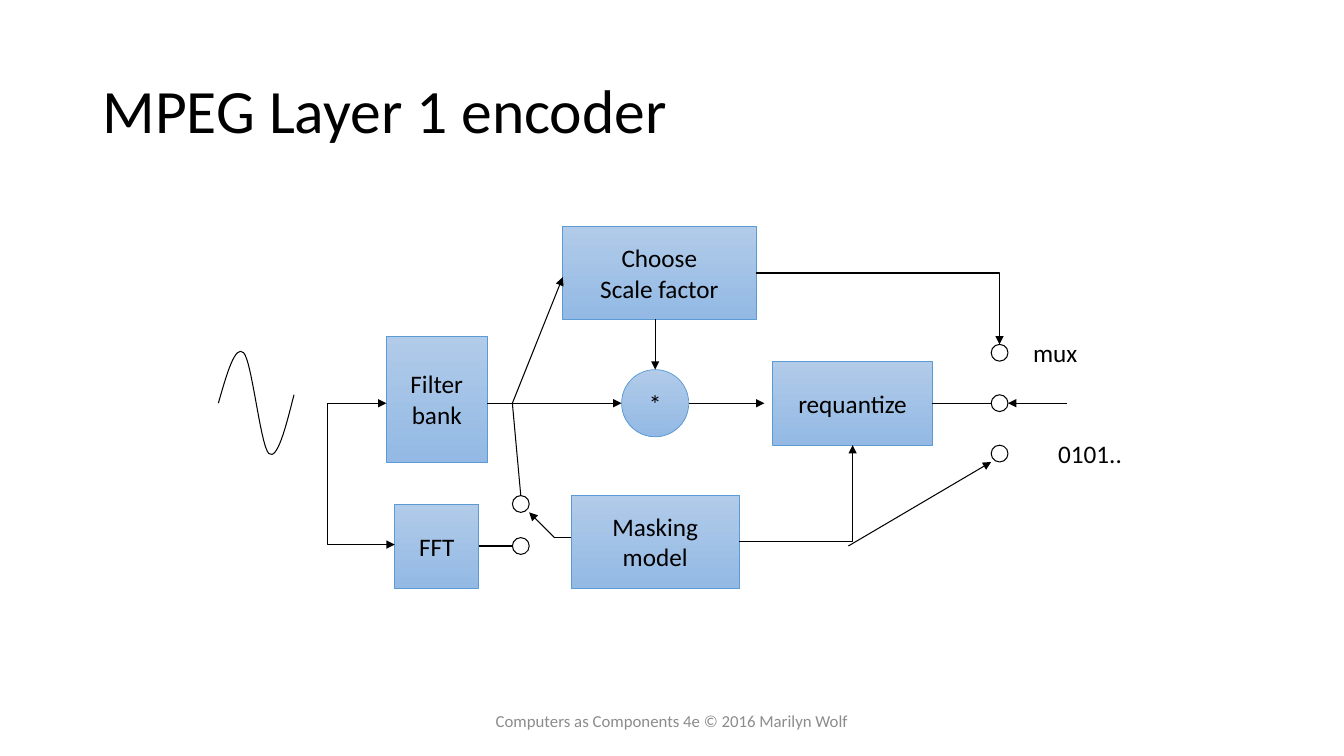
from dataclasses import dataclass

from lxml import etree
from pptx import Presentation
from pptx.dml.color import RGBColor
from pptx.enum.shapes import MSO_CONNECTOR, MSO_SHAPE
from pptx.enum.text import MSO_ANCHOR, MSO_AUTO_SIZE, PP_ALIGN
from pptx.oxml.ns import qn
from pptx.util import Pt

RECTANGLE, OVAL = MSO_SHAPE.RECTANGLE, MSO_SHAPE.OVAL
STRAIGHT, ELBOW = MSO_CONNECTOR.STRAIGHT, MSO_CONNECTOR.ELBOW
LEFT, CENTER = PP_ALIGN.LEFT, PP_ALIGN.CENTER
TOP, MIDDLE = MSO_ANCHOR.TOP, MSO_ANCHOR.MIDDLE


@dataclass(frozen=True)
class Theme:
    font: str = "Calibri"
    ink: RGBColor = RGBColor(0x00, 0x00, 0x00)
    muted: RGBColor = RGBColor(0x8C, 0x8C, 0x8C)
    outline: RGBColor = RGBColor(0x5B, 0x9B, 0xD5)
    block_top: RGBColor = RGBColor(0xB1, 0xCB, 0xE9)
    block_bottom: RGBColor = RGBColor(0x93, 0xB9, 0xE4)
    title_size: int = 44
    label_size: int = 18
    footer_size: int = 12
    wire: float = 0.75
    border: float = 0.5


THEME = Theme()


def write(frame, text, size=THEME.label_size, color=THEME.ink,
          align=LEFT, anchor=TOP, wrap=False, spacing=None):
    """Fill a text frame, one paragraph for each line of text."""
    frame.text = text
    frame.word_wrap = wrap
    frame.vertical_anchor = anchor
    for para in frame.paragraphs:
        para.alignment = align
        para.line_spacing = spacing
        para.font.name = THEME.font
        para.font.size = Pt(size)
        para.font.color.rgb = color


def connect(start, end, kind=STRAIGHT, arrow=True):
    wire = page.shapes.add_connector(kind, *map(Pt, start + end))
    wire.line.color.rgb = THEME.ink
    wire.line.width = Pt(THEME.wire)
    properties = wire._element.spPr
    if arrow:
        etree.SubElement(properties.find(qn("a:ln")), qn("a:tailEnd"), type="triangle")
    etree.SubElement(properties, qn("a:effectLst"))
    return properties.find(qn("a:prstGeom"))


deck = Presentation()
deck.slide_width, deck.slide_height = Pt(960), Pt(540)
page = deck.slides.add_slide(deck.slide_layouts[5])

title = page.shapes.title
title.left, title.top, title.width, title.height = map(Pt, (66, 28.8, 828, 104.4))
write(title.text_frame, "MPEG Layer 1 encoder", size=THEME.title_size,
      anchor=MIDDLE, wrap=True, spacing=0.9)

# Input wave: a start point, then three points for each Bezier curve
wave_points = [(156, 288),
               (162, 267), (168, 246), (174, 252),
               (180, 258), (186, 318), (192, 324),
               (198, 329), (204, 305.5), (210, 282)]
builder = page.shapes.build_freeform(*wave_points[0], scale=Pt(1))
builder.add_line_segments(wave_points[1:], close=False)
wave = builder.convert_to_shape()
wave.shadow.inherit = False
wave.fill.background()
wave.line.color.rgb = THEME.ink
wave.line.width = Pt(THEME.wire)
outline = next(wave._element.iter(qn("a:moveTo"))).getparent()
segments = outline.findall(qn("a:lnTo"))
for first in range(0, len(segments), 3):
    curve = etree.SubElement(outline, qn("a:cubicBezTo"))
    for segment in segments[first:first + 3]:
        curve.append(segment[0])
        outline.remove(segment)

# Processing blocks
blocks = [
    ("Filter\nbank", RECTANGLE, 276, 240, 72, 90),
    ("Choose\nScale factor", RECTANGLE, 402, 162, 138, 66),
    ("Masking\nmodel", RECTANGLE, 408, 354, 120, 66),
    ("requantize", RECTANGLE, 552, 258, 114, 60),
    ("*", OVAL, 444, 264, 48, 48),
    ("FFT", RECTANGLE, 282, 360, 60, 60),
]
for label, outline_kind, *bounds in blocks:
    block = page.shapes.add_shape(outline_kind, *map(Pt, bounds))
    block.shadow.inherit = False
    block.fill.gradient()
    block.fill.gradient_angle = 270
    for stop, color in zip(block.fill.gradient_stops,
                           (THEME.block_top, THEME.block_bottom)):
        stop.color.rgb = color
    block.line.color.rgb = THEME.outline
    block.line.width = Pt(THEME.border)
    write(block.text_frame, label, align=CENTER, anchor=MIDDLE)

# Switch contacts, by centre
for x, y in [(372, 390), (372, 360), (714, 288), (714, 252), (714, 324)]:
    contact = page.shapes.add_shape(OVAL, Pt(x - 6), Pt(y - 6), Pt(12), Pt(12))
    contact.shadow.inherit = False
    contact.fill.background()
    contact.line.color.rgb = THEME.ink
    contact.line.width = Pt(THEME.wire)

# Wires
arrows = [
    ((234, 288), (276, 288)),
    ((348, 288), (444, 288)),
    ((468, 228), (468, 264)),
    ((366, 288), (402, 198)),
    ((396, 384), (378, 366)),
    ((492, 288), (546, 288)),
    ((606, 390), (708, 330)),
    ((762, 288), (720, 288)),
]
for start, end in arrows:
    connect(start, end)

plain_wires = [
    ((396, 384), (408, 384)),
    ((366, 288), (372, 354)),
    ((342, 390), (366, 390)),
    ((666, 288), (708, 288)),
]
for start, end in plain_wires:
    connect(start, end, arrow=False)

for start, end in [((528, 387), (609, 318)), ((540, 195), (714, 246))]:
    connect(start, end, kind=ELBOW).set("prst", "bentConnector2")

# The branch to the FFT turns down at its very start
branch = connect((234, 288), (282, 389), kind=ELBOW)
adjustments = branch.find(qn("a:avLst"))
etree.SubElement(adjustments, qn("a:gd"), name="adj1", fmla="val 0")

# Output labels and footer
for label, *bounds in [("mux", 730.8, 237.6, 46.8, 28.8),
                       ("0101..", 748.8, 309.6, 60.5, 28.8)]:
    box = page.shapes.add_textbox(*map(Pt, bounds))
    write(box.text_frame, label)
    box.text_frame.auto_size = MSO_AUTO_SIZE.SHAPE_TO_FIT_TEXT

footer = page.shapes.add_textbox(Pt(318), Pt(500.5), Pt(324), Pt(28.8))
write(footer.text_frame, "Computers as Components 4e © 2016 Marilyn Wolf",
      size=THEME.footer_size, color=THEME.muted, align=CENTER,
      anchor=MIDDLE, wrap=True)

deck.save("out.pptx")
